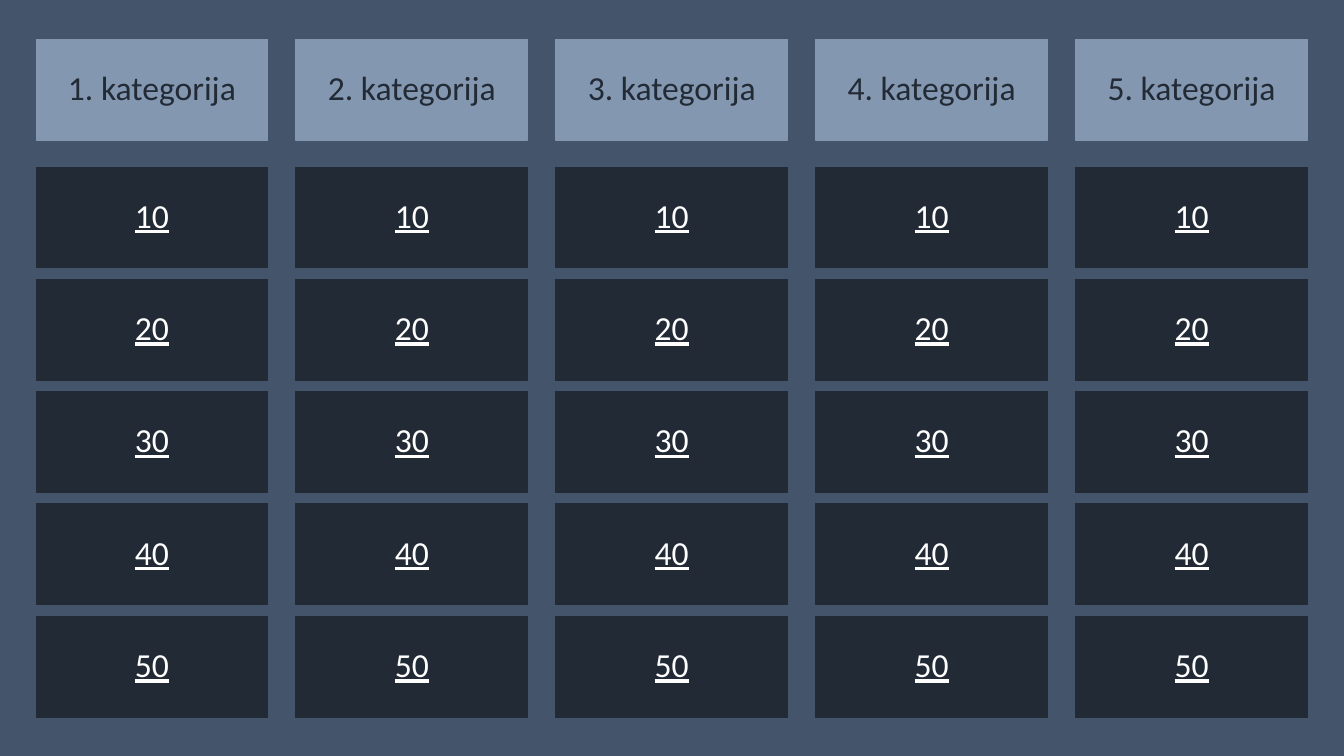
import dataclasses

import pptx
import pptx.dml.color
import pptx.enum.shapes
import pptx.enum.text
import pptx.util

Cm = pptx.util.Cm


@dataclasses.dataclass(frozen=True)
class Theme:
    background: str = "44546A"
    header: str = "8497B0"
    dark: str = "222A35"
    light: str = "FFFFFF"
    font: str = "Calibri"
    text_size: int = 24
    line_width: float = 0.75


class Board:
    """Draws the tiles of a quiz board on one slide in one theme."""

    def __init__(self, s, theme):
        self.s = s
        self.theme = theme

    def color(self, value):
        return pptx.dml.color.RGBColor.from_string(value)

    def background(self):
        fill = self.s.background.fill
        fill.solid()
        fill.fore_color.rgb = self.color(self.theme.background)

    def tile(self, left, top, width, height, text, fill, ink, underline=False):
        sp = self.s.shapes.add_shape(
            pptx.enum.shapes.MSO_SHAPE.RECTANGLE,
            Cm(left), Cm(top), Cm(width), Cm(height))
        sp.shadow.inherit = False
        sp.fill.solid()
        sp.fill.fore_color.rgb = self.color(fill)
        sp.line.color.rgb = self.color(fill)
        sp.line.width = pptx.util.Pt(self.theme.line_width)
        tf = sp.text_frame
        tf.word_wrap = True
        tf.vertical_anchor = pptx.enum.text.MSO_ANCHOR.MIDDLE
        p = tf.paragraphs[0]
        p.alignment = pptx.enum.text.PP_ALIGN.CENTER
        p.line_spacing = 0.9
        r = p.add_run()
        r.text = text
        r.font.name = self.theme.font
        r.font.size = pptx.util.Pt(self.theme.text_size)
        r.font.color.rgb = self.color(ink)
        if underline:
            r.font.underline = True

    def category(self, left, top, width, height, text):
        self.tile(left, top, width, height, text, self.theme.header, self.theme.dark)

    def points(self, left, top, width, height, value):
        self.tile(left, top, width, height, str(value),
                  self.theme.dark, self.theme.light, underline=True)


def main():
    prs = pptx.Presentation()
    prs.slide_width, prs.slide_height = Cm(33.87), Cm(19.05)
    board = Board(prs.slides.add_slide(prs.slide_layouts[6]), Theme())
    board.background()

    categories = ("1. kategorija", "2. kategorija", "3. kategorija",
                  "4. kategorija", "5. kategorija")
    values = (10, 20, 30, 40, 50)
    width, height = 5.84, 2.54
    left, column_step = 0.91, 6.55
    header_top, points_top, row_step = 0.99, 4.21, 2.83

    for column, category in enumerate(categories):
        x = left + column * column_step
        board.category(x, header_top, width, height, category)
        for row, value in enumerate(values):
            board.points(x, points_top + row * row_step, width, height, value)

    prs.save("out.pptx")


if __name__ == "__main__":
    main()
